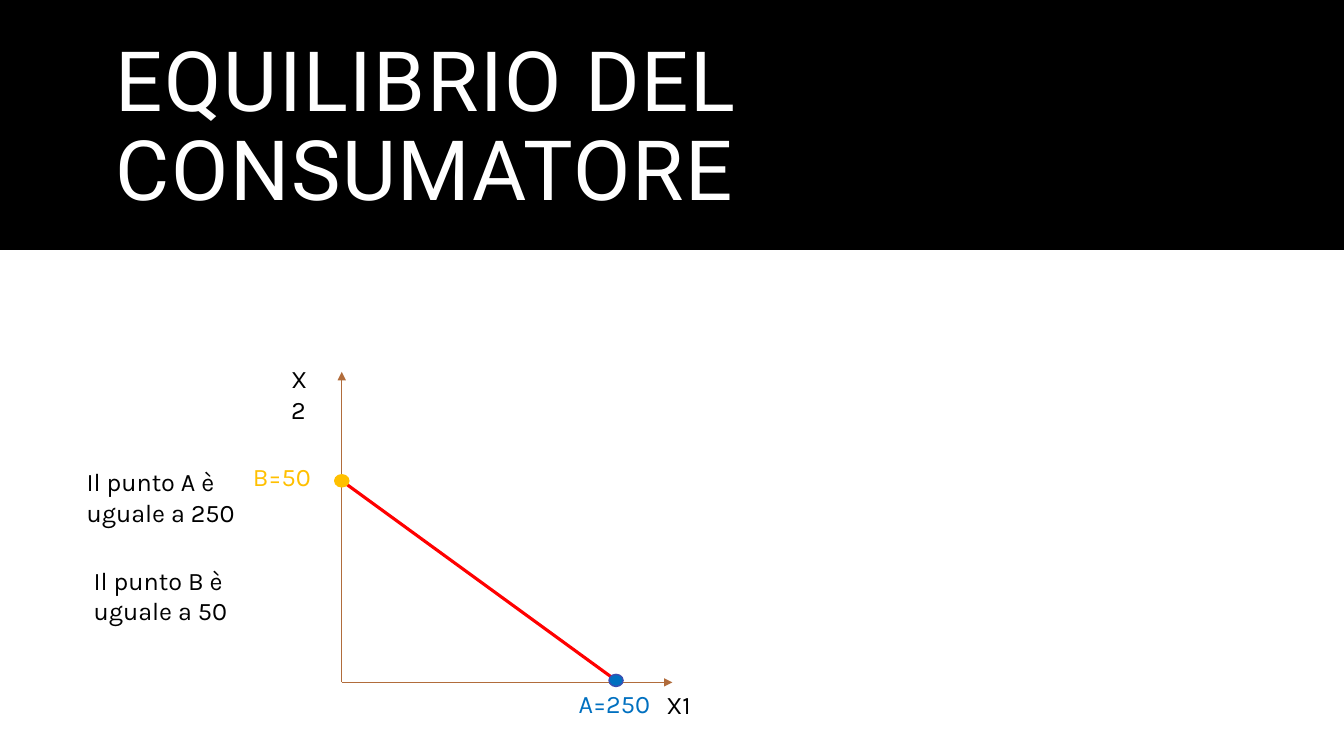
from dataclasses import dataclass

from lxml import etree
from pptx import Presentation
from pptx.dml.color import RGBColor
from pptx.enum import shapes, text
from pptx.oxml.ns import qn
from pptx.util import Inches, Pt


@dataclass(frozen=True)
class Theme:
    black: str = "000000"
    white: str = "FFFFFF"
    axis: str = "B16C3B"
    budget: str = "FF0000"
    blue: str = "0070C0"
    rim: str = "3B4EB1"
    gold: str = "FFC000"
    head: str = "Roboto"
    body: str = "Karla"
    big: float = 59.4
    small: float = 18


THEME = Theme()
TITLE = "EQUILIBRIO DEL CONSUMATORE"
ORIGIN = (3.39, 6.77)
POINT_A = (6.11, 6.75)
POINT_B = (3.39, 4.77)
DOT = (0.14, 0.12)

LINES = [
    (ORIGIN, (6.67, 6.77), THEME.axis, 0.5, True),
    (ORIGIN, (3.39, 3.69), THEME.axis, 0.5, True),
    (POINT_B, POINT_A, THEME.budget, 2.25, False),
]
DOTS = [
    (POINT_A, THEME.blue, THEME.rim),
    (POINT_B, THEME.gold, THEME.gold),
]
LABELS = [
    ("X1", (6.51, 6.79, 0.49, 0.4), THEME.black),
    ("X2", (2.79, 3.56, 0.45, 0.71), THEME.black),
    ("A=250", (5.64, 6.78, 0.94, 0.4), THEME.blue),
    ("B=50", (2.41, 4.53, 0.8, 0.4), THEME.gold),
    ("Il punto A è uguale a 250", (0.76, 4.58, 2.05, 0.71), THEME.black),
    ("Il punto B è uguale a 50", (0.83, 5.56, 2.05, 0.71), THEME.black),
]


def color(code):
    return RGBColor.from_string(code)


def inches(*values):
    return [Inches(value) for value in values]


def add_run(para, words, face, size, code):
    run = para.add_run()
    run.text = words
    run.font.name = face
    run.font.size = Pt(size)
    run.font.color.rgb = color(code)
    return run


def add_fill(slide, kind, box, fill, rim, width):
    shape = slide.shapes.add_shape(kind, *inches(*box))
    shape.shadow.inherit = False
    shape.fill.solid()
    shape.fill.fore_color.rgb = color(fill)
    shape.line.color.rgb = color(rim)
    shape.line.width = Pt(width)
    return shape


def add_title(slide):
    title = slide.shapes.title
    title.left, title.top, title.width, title.height = inches(1.05, 0.35, 11.23, 1.86)
    frame = title.text_frame
    frame.word_wrap = True
    frame.auto_size = text.MSO_AUTO_SIZE.NONE
    frame.vertical_anchor = text.MSO_ANCHOR.MIDDLE
    para = frame.paragraphs[0]
    para.alignment = text.PP_ALIGN.LEFT
    para.line_spacing = 0.9
    run = add_run(para, TITLE, THEME.head, THEME.big, THEME.white)
    run.font._element.set("spc", "120")


def add_line(slide, start, end, code, width, arrow):
    line = slide.shapes.add_connector(
        shapes.MSO_CONNECTOR.STRAIGHT, *inches(*start, *end))
    line.line.color.rgb = color(code)
    line.line.width = Pt(width)
    if arrow:
        etree.SubElement(line.line._get_or_add_ln(), qn("a:tailEnd"), type="triangle")
    etree.SubElement(line._element.spPr, qn("a:effectLst"))


def add_dot(slide, center, fill, rim):
    wide, high = DOT
    box = (center[0] - wide / 2, center[1] - high / 2, wide, high)
    add_fill(slide, shapes.MSO_SHAPE.OVAL, box, fill, rim, 1)


def add_label(slide, words, box, code):
    frame = slide.shapes.add_textbox(*inches(*box)).text_frame
    frame.word_wrap = True
    add_run(frame.paragraphs[0], words, THEME.body, THEME.small, code)


def main():
    deck = Presentation()
    deck.slide_width, deck.slide_height = inches(13.33, 7.5)
    slide = deck.slides.add_slide(deck.slide_layouts[5])
    band = add_fill(slide, shapes.MSO_SHAPE.RECTANGLE, (0, 0, 13.33, 2.48),
                    THEME.black, THEME.black, 0)
    band.line.fill.background()
    slide.shapes.title._element.addprevious(band._element)
    add_title(slide)
    for line in LINES:
        add_line(slide, *line)
    for dot in DOTS:
        add_dot(slide, *dot)
    for label in LABELS:
        add_label(slide, *label)
    deck.save("out.pptx")


if __name__ == "__main__":
    main()
